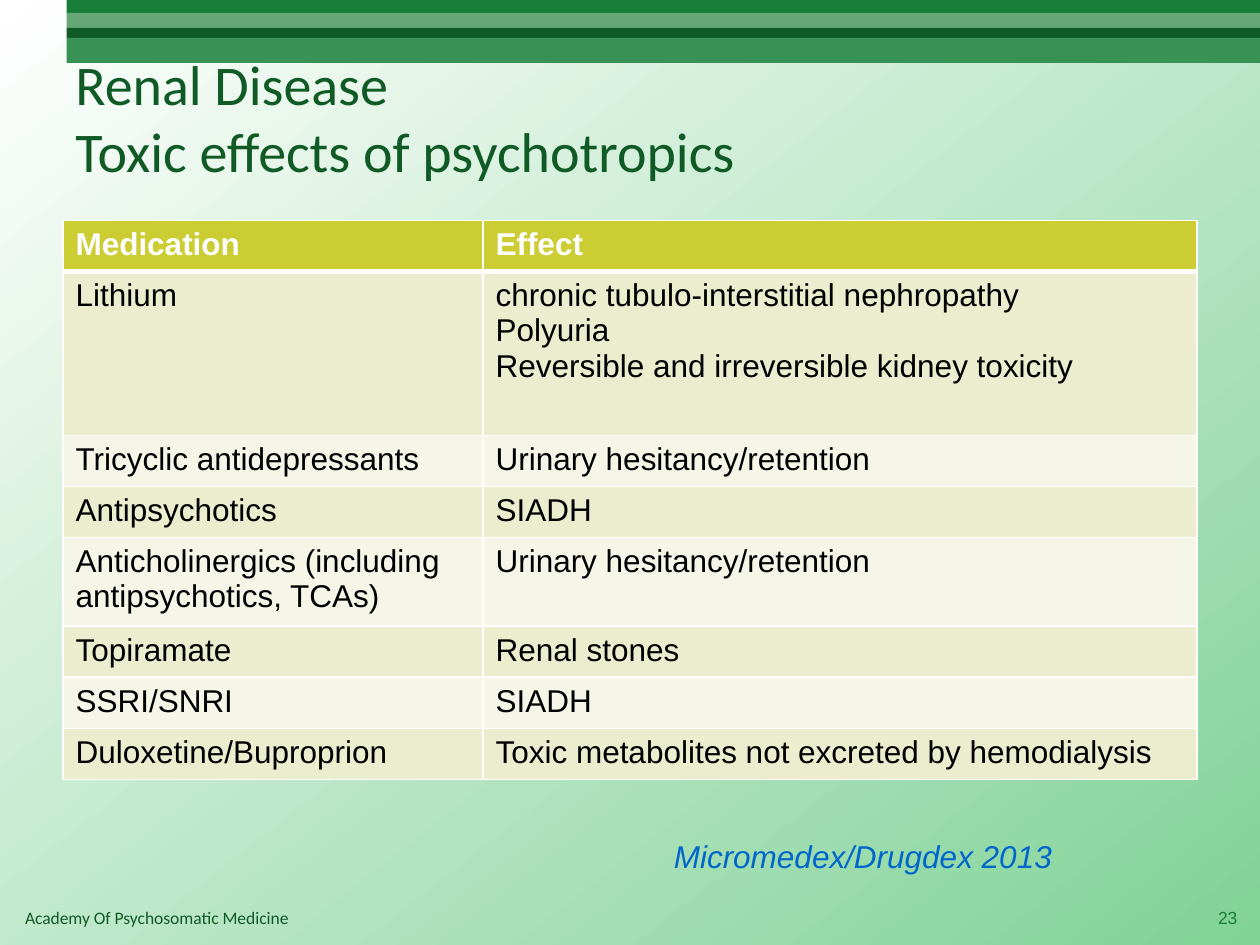
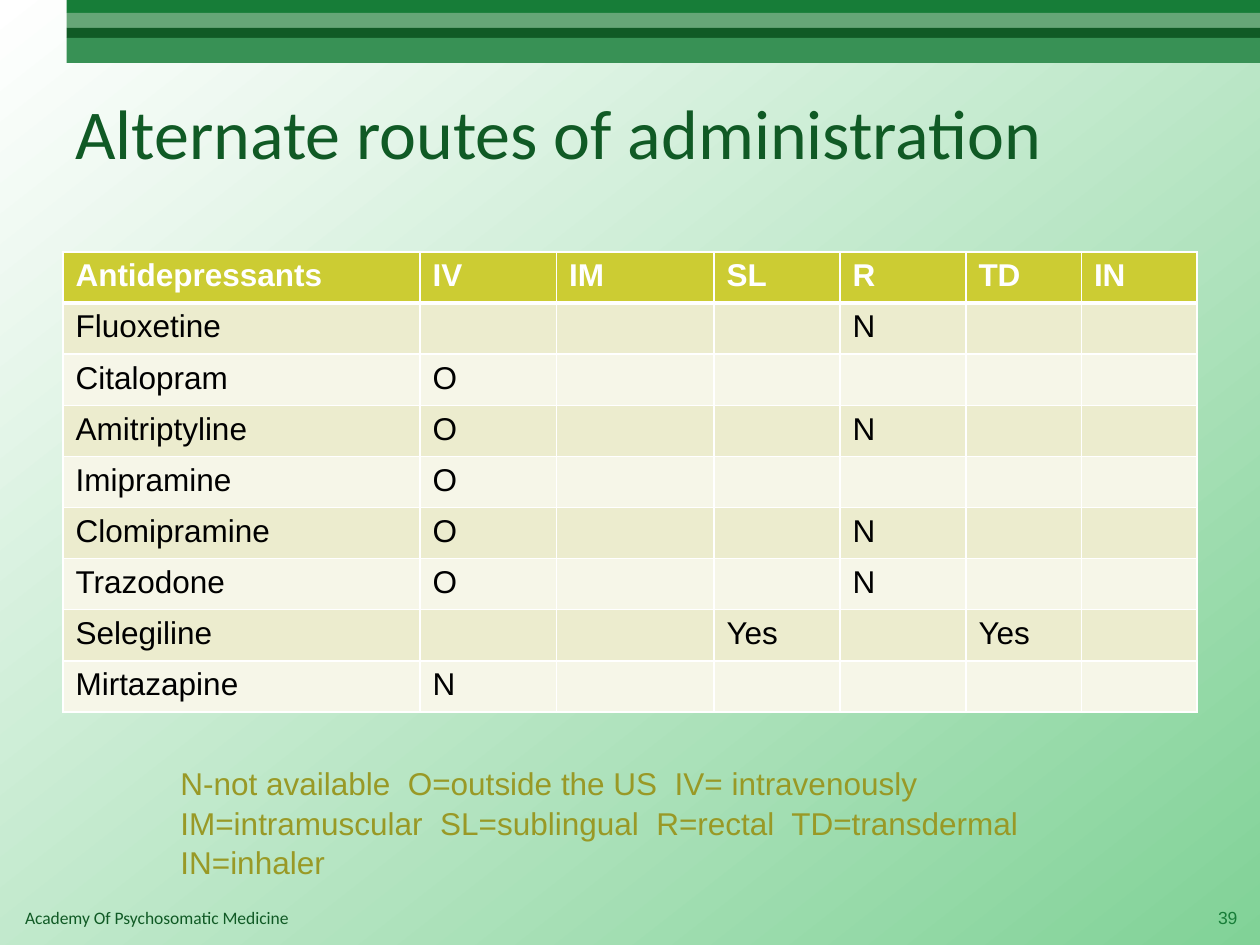
from collections import namedtuple
from dataclasses import dataclass

from lxml.etree import SubElement
from pptx import Presentation
from pptx.dml.color import RGBColor as Rgb
from pptx.enum.shapes import MSO_SHAPE as Shape
from pptx.enum.text import MSO_ANCHOR as Anchor, PP_ALIGN as Align
from pptx.oxml.ns import qn
from pptx.util import Pt

Box = namedtuple("Box", "left top width height")


@dataclass(frozen=True)
class Theme:
    heading_font: str = "Calibri"
    body_font: str = "Arial"
    dark_green: str = "105A25"
    green: str = "177D38"
    soft_green: str = "66A677"
    mid_green: str = "389155"
    backdrop: tuple = ("FFFFFF", "81D297")
    backdrop_angle: int = 308
    white: str = "FFFFFF"
    black: str = "000000"
    header_fill: str = "CCCC33"
    row_fills: tuple = ("ECECCE", "F6F6E8")
    source_blue: str = "0066CC"
    legend_olive: str = "999926"
    small: int = 10
    body: int = 18
    heading: int = 32
    large_heading: int = 40
    thin: int = 1
    thick: int = 3


THEME = Theme()
PAGE = Box(0, 0, 720, 540)
BANDS = Box(38, 0, 682, 36)
BAND_STACK = (
    (7.4, THEME.green),
    (8.6, THEME.soft_green),
    (5.7, THEME.dark_green),
    (14.3, THEME.mid_green),
)
ROW_HEIGHT = 29.2

TOXIC_EFFECTS = (
    ("Medication", "Effect"),
    ("Lithium", "chronic tubulo-interstitial nephropathy\nPolyuria\n"
                "Reversible and irreversible kidney toxicity"),
    ("Tricyclic antidepressants", "Urinary hesitancy/retention"),
    ("Antipsychotics", "SIADH"),
    ("Anticholinergics (including antipsychotics, TCAs)", "Urinary hesitancy/retention"),
    ("Topiramate", "Renal stones"),
    ("SSRI/SNRI", "SIADH"),
    ("Duloxetine/Buproprion", "Toxic metabolites not excreted by hemodialysis"),
)
ROUTES = ("IV", "IM", "SL", "R", "TD", "IN")
AVAILABILITY = (
    ("Fluoxetine", {"R": "N"}),
    ("Citalopram", {"IV": "O"}),
    ("Amitriptyline", {"IV": "O", "R": "N"}),
    ("Imipramine", {"IV": "O"}),
    ("Clomipramine", {"IV": "O", "R": "N"}),
    ("Trazodone", {"IV": "O", "R": "N"}),
    ("Selegiline", {"SL": "Yes", "TD": "Yes"}),
    ("Mirtazapine", {"IV": "N"}),
)
LEGEND = ("N-not available", "O=outside the US", "IV= intravenously", "IM=intramuscular",
          "SL=sublingual", "R=rectal", "TD=transdermal", "IN=inhaler")


def points(box):
    return [Pt(length) for length in box]


def style(font, size, color, face=THEME.body_font, bold=False, italic=False):
    font.name, font.size, font.bold, font.italic = face, Pt(size), bold, italic
    font.color.rgb = Rgb.from_string(color)


def add_text(slide, box, words, size, color, face=THEME.body_font, italic=False,
             anchor=Anchor.TOP, align=Align.LEFT, spacing=None):
    frame = slide.shapes.add_textbox(*points(box)).text_frame
    frame.word_wrap = True
    frame.vertical_anchor = anchor
    paragraph = frame.paragraphs[0]
    paragraph.text = words
    paragraph.alignment = align
    paragraph.line_spacing = spacing
    for run in paragraph.runs:
        style(run.font, size, color, face, italic=italic)


def add_backdrop(slide):
    fill = slide.background.fill
    fill.gradient()
    fill.gradient_angle = THEME.backdrop_angle
    for stop, color in zip(fill.gradient_stops, THEME.backdrop):
        stop.color.rgb = Rgb.from_string(color)


def add_bands(slide, box):
    top = box.top
    for height, color in BAND_STACK:
        band = slide.shapes.add_shape(
            Shape.RECTANGLE, *points((box.left, top, box.width, height)))
        band.shadow.inherit = False
        band.fill.solid()
        band.fill.fore_color.rgb = Rgb.from_string(color)
        band.line.fill.background()
        top += height


def add_footer(slide, box, number):
    bottom = box.top + box.height
    add_text(slide, Box(box.left + 7.2, bottom - 25.2, 500, 19.4),
             "Academy Of Psychosomatic Medicine",
             THEME.small, THEME.dark_green, THEME.heading_font)
    add_text(slide, Box(box.left + box.width - 34.6, bottom - 30, 28.8, 28.8), str(number),
             THEME.small, THEME.green, anchor=Anchor.MIDDLE, align=Align.RIGHT)


def add_title(slide, box, words, size):
    add_text(slide, box, words, size, THEME.dark_green, THEME.heading_font,
             anchor=Anchor.MIDDLE)


def add_borders(cell, top, bottom):
    properties = cell._tc.get_or_add_tcPr()
    widths = (("L", THEME.thin), ("R", THEME.thin), ("T", top), ("B", bottom))
    for position, (side, width) in enumerate(widths):
        line = SubElement(properties, qn(f"a:ln{side}"), w=str(Pt(width)))
        SubElement(SubElement(line, qn("a:solidFill")), qn("a:srgbClr"), val=THEME.white)
        properties.insert(position, line)


def fill_cell(cell, words, row_index):
    is_header = row_index == 0
    color = THEME.header_fill if is_header else THEME.row_fills[(row_index - 1) % 2]
    cell.fill.solid()
    cell.fill.fore_color.rgb = Rgb.from_string(color)
    add_borders(cell,
                top=THEME.thick if row_index == 1 else THEME.thin,
                bottom=THEME.thick if is_header else THEME.thin)
    cell.text_frame.text = words
    for paragraph in cell.text_frame.paragraphs:
        style(paragraph.font, THEME.body, THEME.white if is_header else THEME.black,
              bold=is_header)
        for run in paragraph.runs:
            style(run.font, THEME.body, THEME.white if is_header else THEME.black,
                  bold=is_header)


def add_grid(slide, left, top, rows, widths, tall_rows=None):
    heights = [(tall_rows or {}).get(index, ROW_HEIGHT) for index in range(len(rows))]
    box = Box(left, top, sum(widths), sum(heights))
    table = slide.shapes.add_table(len(rows), len(widths), *points(box)).table
    for column, width in zip(table.columns, widths):
        column.width = Pt(width)
    for row_index, (row, height) in enumerate(zip(rows, heights)):
        table.rows[row_index].height = Pt(height)
        for column_index, words in enumerate(row):
            fill_cell(table.cell(row_index, column_index), words, row_index)


def add_framed_slide(deck, number):
    slide = deck.slides.add_slide(deck.slide_layouts[6])
    add_backdrop(slide)
    add_bands(slide, BANDS)
    add_footer(slide, PAGE, number)
    return slide


def build_toxic_effects(deck):
    slide = add_framed_slide(deck, 23)
    add_title(slide, Box(36, 21.6, 648, 90),
              "Renal Disease\nToxic effects of psychotropics", THEME.heading)
    add_grid(slide, 36, 126, TOXIC_EFFECTS, (240, 408), {1: 93.6, 4: 50.6})
    add_text(slide, Box(378, 474.5, 288, 29), "Micromedex/Drugdex 2013",
             THEME.body, THEME.source_blue, italic=True)


def build_alternate_routes(deck):
    slide = add_framed_slide(deck, 39)
    add_title(slide, Box(36, 30, 660, 90), "Alternate routes of administration",
              THEME.large_heading)
    rows = [("Antidepressants", *ROUTES)]
    rows += [(drug, *(marks.get(route, "") for route in ROUTES))
             for drug, marks in AVAILABILITY]
    add_grid(slide, 36, 144, rows, (204, 78, 90, 72, 72, 66, 66))
    add_text(slide, Box(96, 432, 552, 72.7), "  ".join(LEGEND),
             THEME.body, THEME.legend_olive, spacing=1.05)


def main():
    deck = Presentation()
    deck.slide_width, deck.slide_height = Pt(PAGE.width), Pt(PAGE.height)
    build_toxic_effects(deck)
    build_alternate_routes(deck)
    deck.save("out.pptx")


if __name__ == "__main__":
    main()
